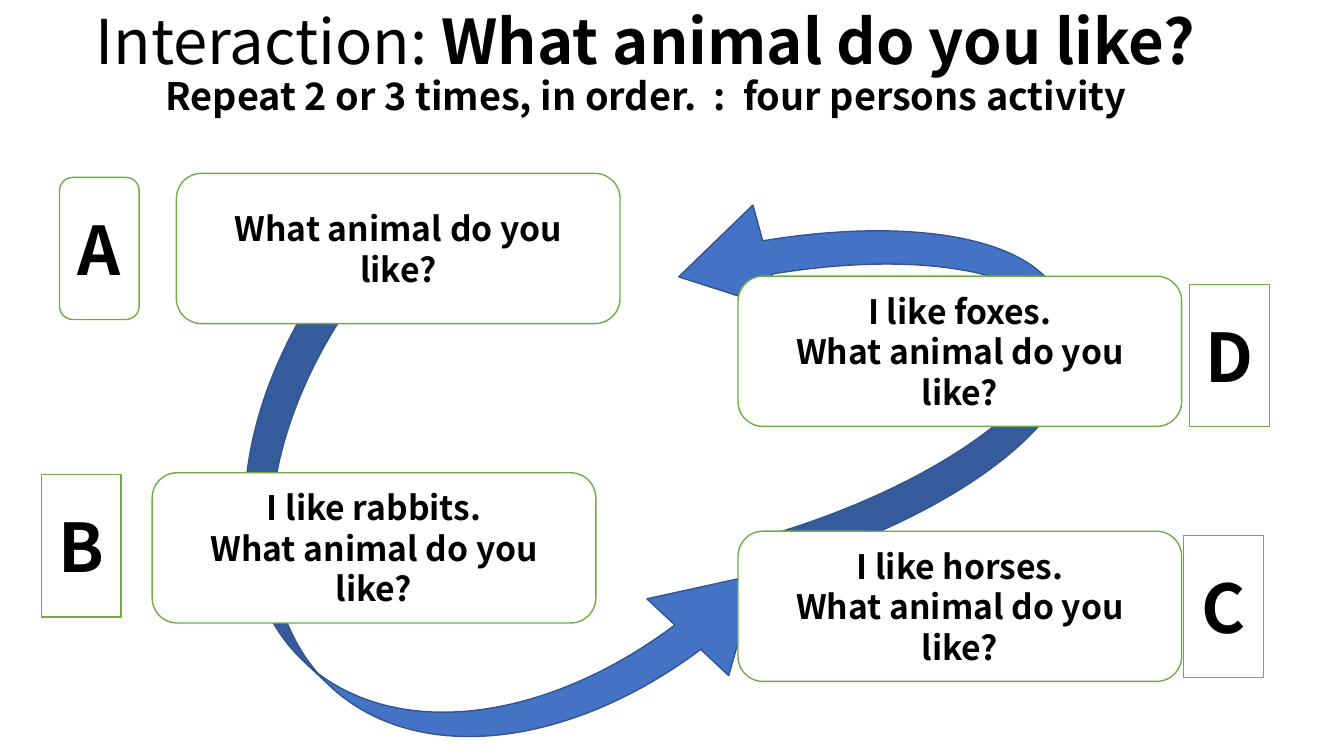
from pptx import Presentation
from pptx import util as u
from pptx.dml.color import RGBColor
from pptx.enum import shapes, text

PX = 9144
FONT = "Noto Sans CJK JP"
BLACK = RGBColor(0x00, 0x00, 0x00)
WHITE = RGBColor(0xFF, 0xFF, 0xFF)
GREEN = RGBColor(0x70, 0xAD, 0x47)
BLUE = RGBColor(0x44, 0x72, 0xC4)
NAVY = RGBColor(0x32, 0x54, 0x91)

QUESTION = "What animal do you like?"
CARD_SIZE = (440, 149)
LETTER_SIZE = (79, 141)


def scaled(box):
    return [u.Emu(length * PX) for length in box]


def style_run(run, size, bold):
    run.font.name = FONT
    run.font.size = u.Pt(size)
    run.font.bold = bold
    run.font.color.rgb = BLACK


def add_outlined(slide, kind, box, fill, line):
    outlined = slide.shapes.add_shape(kind, *scaled(box))
    outlined.shadow.inherit = False
    outlined.fill.solid()
    outlined.fill.fore_color.rgb = fill
    outlined.line.color.rgb = line
    outlined.line.width = u.Pt(1)
    return outlined


def add_heading(slide, box):
    heading = slide.shapes.title
    heading.left, heading.top, heading.width, heading.height = scaled(box)
    frame = heading.text_frame
    frame.word_wrap = True
    frame.auto_size = text.MSO_AUTO_SIZE.NONE
    frame.vertical_anchor = text.MSO_ANCHOR.MIDDLE
    line = frame.paragraphs[0]
    line.alignment = text.PP_ALIGN.CENTER
    line.line_spacing = 0.9
    for words, size, bold in (("Interaction: ", 44, False), (QUESTION, 44, True)):
        run = line.add_run()
        run.text = words
        style_run(run, size, bold)
    line.add_line_break()
    instruction = line.add_run()
    instruction.text = "Repeat 2 or 3 times, in order.  :  four persons activity"
    style_run(instruction, 27, True)


def add_turn_arrow(slide, box, rotation):
    arrow = add_outlined(slide, shapes.MSO_SHAPE.CURVED_RIGHT_ARROW, box, BLUE, NAVY)
    arrow.rotation = rotation
    for index, value in enumerate((0.095, 0.3, 0.25)):
        arrow.adjustments[index] = value


def add_card(slide, box, words, size, corner):
    card = add_outlined(slide, shapes.MSO_SHAPE.ROUNDED_RECTANGLE, box, WHITE, GREEN)
    card.adjustments[0] = corner
    frame = card.text_frame
    frame.text = words
    frame.word_wrap = True
    frame.vertical_anchor = text.MSO_ANCHOR.MIDDLE
    frame.margin_left = frame.margin_right = u.Emu(12 * PX)
    for line in frame.paragraphs:
        line.alignment = text.PP_ALIGN.CENTER
        for run in line.runs:
            style_run(run, size, True)


def add_speaker(slide, letter, letter_at, card_at, speech, letter_corner):
    add_card(slide, card_at + CARD_SIZE, speech, 24, 0.1667)
    add_card(slide, letter_at + LETTER_SIZE, letter, 48, letter_corner)


def add_activity(slide):
    add_heading(slide, (21, 5, 1239, 118))
    add_turn_arrow(slide, (700, 169, 359, 359), 164.7)
    add_turn_arrow(slide, (270, 259, 371, 575), 313.2)
    add_speaker(slide, "A", (59, 176), (175, 172), QUESTION, 0.1667)
    for letter, letter_at, card_at, animal in (
        ("B", (41, 471), (151, 469), "rabbits"),
        ("C", (1174, 531), (732, 527), "horses"),
        ("D", (1180, 282), (732, 274), "foxes"),
    ):
        speech = f"I like {animal}.\n{QUESTION}"
        add_speaker(slide, letter, letter_at, card_at, speech, 0)


def main():
    deck = Presentation()
    deck.slide_width, deck.slide_height = scaled((1333, 750))
    add_activity(deck.slides.add_slide(deck.slide_layouts[5]))
    deck.save("out.pptx")


if __name__ == "__main__":
    main()
